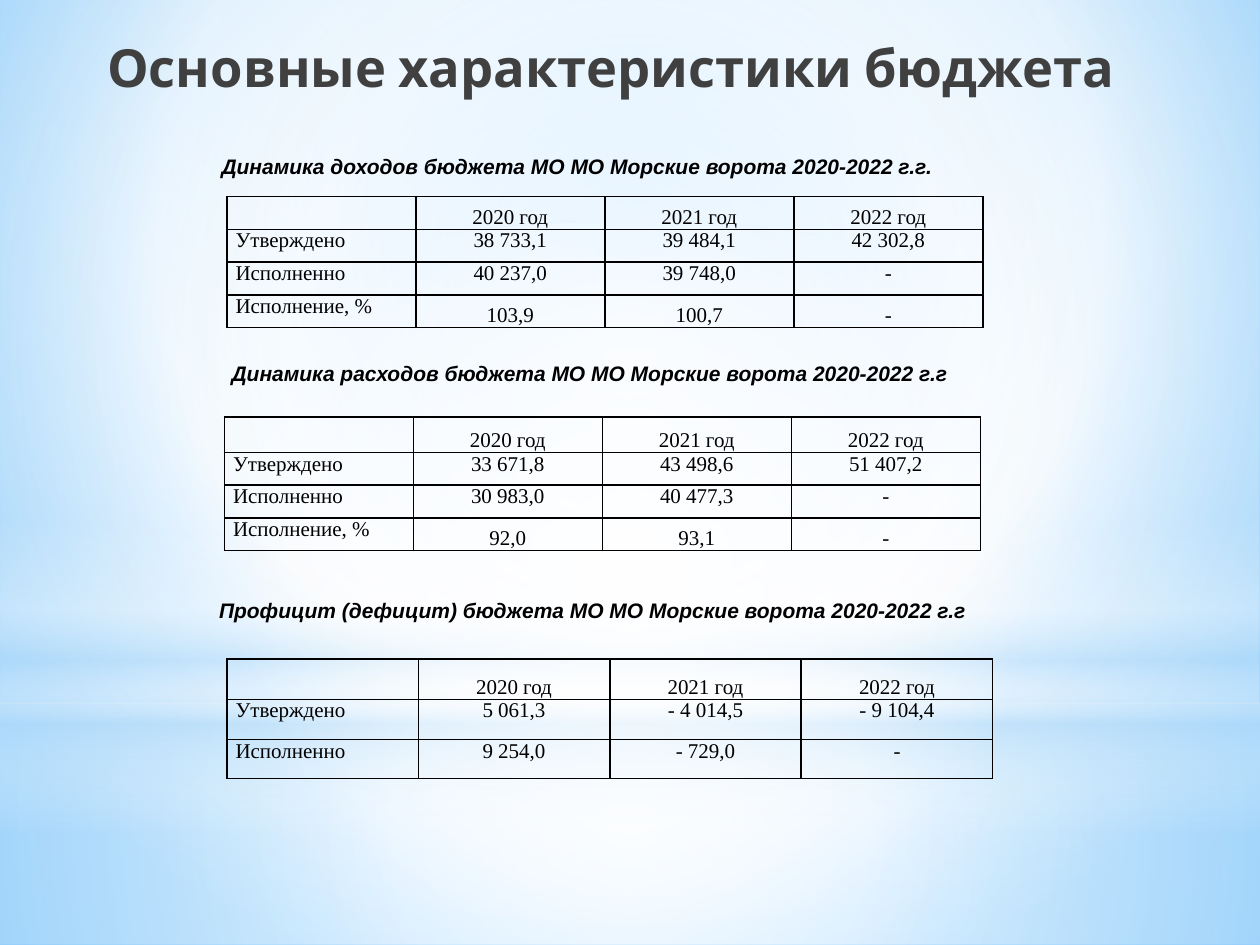
from dataclasses import dataclass

from pptx import Presentation
from pptx.dml.color import RGBColor
from pptx.enum.shapes import MSO_SHAPE as Shape
from pptx.enum.text import MSO_ANCHOR as Anchor, PP_ALIGN as Align
from pptx.oxml import parse_xml
from pptx.oxml.ns import qn
from pptx.util import Inches, Pt

NS = 'xmlns:a="http://schemas.openxmlformats.org/drawingml/2006/main"'
BLACK = "000000"
WHITE = "FFFFFF"
PALE = "B4DCFA"
CENTRE = (50, 50, 50, 50)
YEARS = ["", "2020 год", "2021 год", "2022 год"]


@dataclass
class Glow:
    """A background layer: stops are (position, colour, opacity) in percent."""
    kind: Shape
    top: float
    height: float
    stops: list
    focus: tuple | None = CENTRE


@dataclass
class Section:
    """A caption with its budget table."""
    caption: str
    caption_at: tuple
    indent: float
    table_at: tuple
    column: float
    heights: list
    rows: list


GLOWS = [
    Glow(Shape.RECTANGLE, 5.58, 1.92, [(0, WHITE, 91), (37, WHITE, 76), (100, PALE, 79)]),
    Glow(Shape.RECTANGLE, 0, 5.58, [(0, WHITE, 89), (48, WHITE, 62), (100, PALE, 79)]),
    Glow(Shape.RECTANGLE, 4.12, 2.5, [(0, WHITE, 0), (29, WHITE, 30), (45, PALE, 40),
                                      (55, WHITE, 26), (65, PALE, 60), (100, WHITE, 0)], None),
    Glow(Shape.OVAL, 1.75, 5.58, [(0, WHITE, 100), (56, WHITE, 0)]),
]

SECTIONS = [
    Section("Динамика доходов бюджета МО МО Морские ворота 2020-2022 г.г.",
            (1.17, 1.17, 7.03), 0.49, (1.8, 1.56), 1.5, [0.26] * 4,
            [["Утверждено", "38 733,1", "39 484,1", "42 302,8"],
             ["Исполненно", "40 237,0", "39 748,0", "-"],
             ["Исполнение, %", "103,9", "100,7", "-"]]),
    Section("Динамика расходов бюджета МО МО Морские ворота 2020-2022 г.г",
            (1.25, 2.81, 6.8), 0.49, (1.78, 3.31), 1.5, [0.28] + [0.26] * 3,
            [["Утверждено", "33 671,8", "43 498,6", "51 407,2"],
             ["Исполненно", "30 983,0", "40 477,3", "-"],
             ["Исполнение, %", "92,0", "93,1", "-"]]),
    Section("Профицит (дефицит) бюджета МО МО Морские ворота 2020-2022 г.г",
            (1.64, 4.69, 6.64), 0, (1.8, 5.23), 1.52, [0.32, 0.32, 0.31],
            [["Утверждено", "5 061,3", "- 4 014,5", "- 9 104,4"],
             ["Исполненно", "9 254,0", "- 729,0", "-"]]),
]


def rgb(color: str) -> RGBColor:
    return RGBColor.from_string(color)


def set_gradient(fill, parent, stops: list, focus: tuple | None) -> None:
    """Swap a solid fill for a radial gradient, or a vertical one without focus."""
    fill.solid()
    marks = "".join(
        f'<a:gs pos="{place * 1000}"><a:srgbClr val="{color}">'
        f'<a:alpha val="{opacity * 1000}"/></a:srgbClr></a:gs>'
        for place, color, opacity in stops)
    if focus:
        left, top, right, bottom = (side * 1000 for side in focus)
        direction = (f'<a:path path="circle"><a:fillToRect l="{left}" t="{top}" '
                     f'r="{right}" b="{bottom}"/></a:path>')
    else:
        direction = '<a:lin ang="5400000" scaled="0"/>'
    gradient = parse_xml(f'<a:gradFill {NS} rotWithShape="1"><a:gsLst>{marks}</a:gsLst>'
                         f'{direction}</a:gradFill>')
    parent.replace(parent.find(qn("a:solidFill")), gradient)


def add_span(para, text: str, font: str, size: float, color: str,
             bold: bool = False, italic: bool = False) -> None:
    span = para.add_run()
    span.text = text
    span.font.name, span.font.size = font, Pt(size)
    span.font.bold, span.font.italic = bold, italic
    span.font.color.rgb = rgb(color)


def add_glow(page, glow: Glow) -> None:
    layer = page.shapes.add_shape(glow.kind, 0, Inches(glow.top), Inches(10), Inches(glow.height))
    layer.shadow.inherit = False
    layer.line.fill.background()
    set_gradient(layer.fill, layer._element.spPr, glow.stops, glow.focus)


def add_caption(page, section: Section) -> None:
    left, top, width = section.caption_at
    box = page.shapes.add_textbox(Inches(left), Inches(top), Inches(width), Inches(0.3))
    box.text_frame.word_wrap = True
    para = box.text_frame.paragraphs[0]
    if section.indent:
        para._p.get_or_add_pPr().set("indent", str(Inches(section.indent)))
    add_span(para, section.caption, "Arial", 12, BLACK, bold=True, italic=True)


def add_borders(cell) -> None:
    props = cell._tc.get_or_add_tcPr()
    for place, side in enumerate(("lnL", "lnR", "lnT", "lnB")):
        props.insert(place, parse_xml(
            f'<a:{side} {NS} w="{Pt(1)}"><a:solidFill><a:srgbClr val="{BLACK}"/>'
            f'</a:solidFill></a:{side}>'))


def fill_cell(cell, text: str, centred: bool, low: bool) -> None:
    cell.fill.background()
    cell.margin_left = cell.margin_right = Inches(0.07)
    cell.margin_top = cell.margin_bottom = 0
    cell.vertical_anchor = Anchor.BOTTOM if low else Anchor.TOP
    para = cell.text_frame.paragraphs[0]
    para.alignment = Align.CENTER if centred else Align.LEFT
    if text:
        add_span(para, text, "Times New Roman", 12, BLACK)
    else:
        # Keeps the empty corner cell from stretching its row
        para._p.append(parse_xml(f'<a:endParaRPr {NS} sz="1200"/>'))
    add_borders(cell)


def add_budget_table(page, section: Section) -> None:
    rows = [YEARS] + section.rows
    left, top = section.table_at
    table = page.shapes.add_table(
        len(rows), len(YEARS), Inches(left), Inches(top),
        Inches(section.column * len(YEARS)), Inches(sum(section.heights))).table
    table.first_row = table.horz_banding = False
    for column in table.columns:
        column.width = Inches(section.column)
    for r, (values, height) in enumerate(zip(rows, section.heights)):
        table.rows[r].height = Inches(height)
        for c, text in enumerate(values):
            low = c > 0 and (r == 0 or values[0].endswith("%"))
            fill_cell(table.cell(r, c), text, centred=c > 0, low=low)


def add_title(page, text: str) -> None:
    title = page.shapes.title
    title.left, title.top = Inches(0.75), Inches(0.18)
    title.width, title.height = Inches(8.65), Inches(0.7)
    title.text_frame.vertical_anchor = Anchor.MIDDLE
    para = title.text_frame.paragraphs[0]
    para.alignment = Align.LEFT
    add_span(para, text, "Cabin", 30, "404040", bold=True)
    # Bring the title in front of the background layers
    page.shapes._spTree.append(title._element)


def main() -> None:
    deck = Presentation()
    deck.slide_width, deck.slide_height = Inches(10), Inches(7.5)
    page = deck.slides.add_slide(deck.slide_layouts[5])

    # Background
    backdrop = page.background.fill
    set_gradient(backdrop, page._element.cSld.bg.bgPr,
                 [(0, "9ED5FF", 100), (60, WHITE, 100), (100, "5BB9FF", 100)], (20, 10, 20, 60))
    for glow in GLOWS:
        add_glow(page, glow)

    # Title, captions and tables
    add_title(page, "Основные характеристики бюджета")
    for section in SECTIONS:
        add_caption(page, section)
        add_budget_table(page, section)

    deck.save("out.pptx")


if __name__ == "__main__":
    main()
